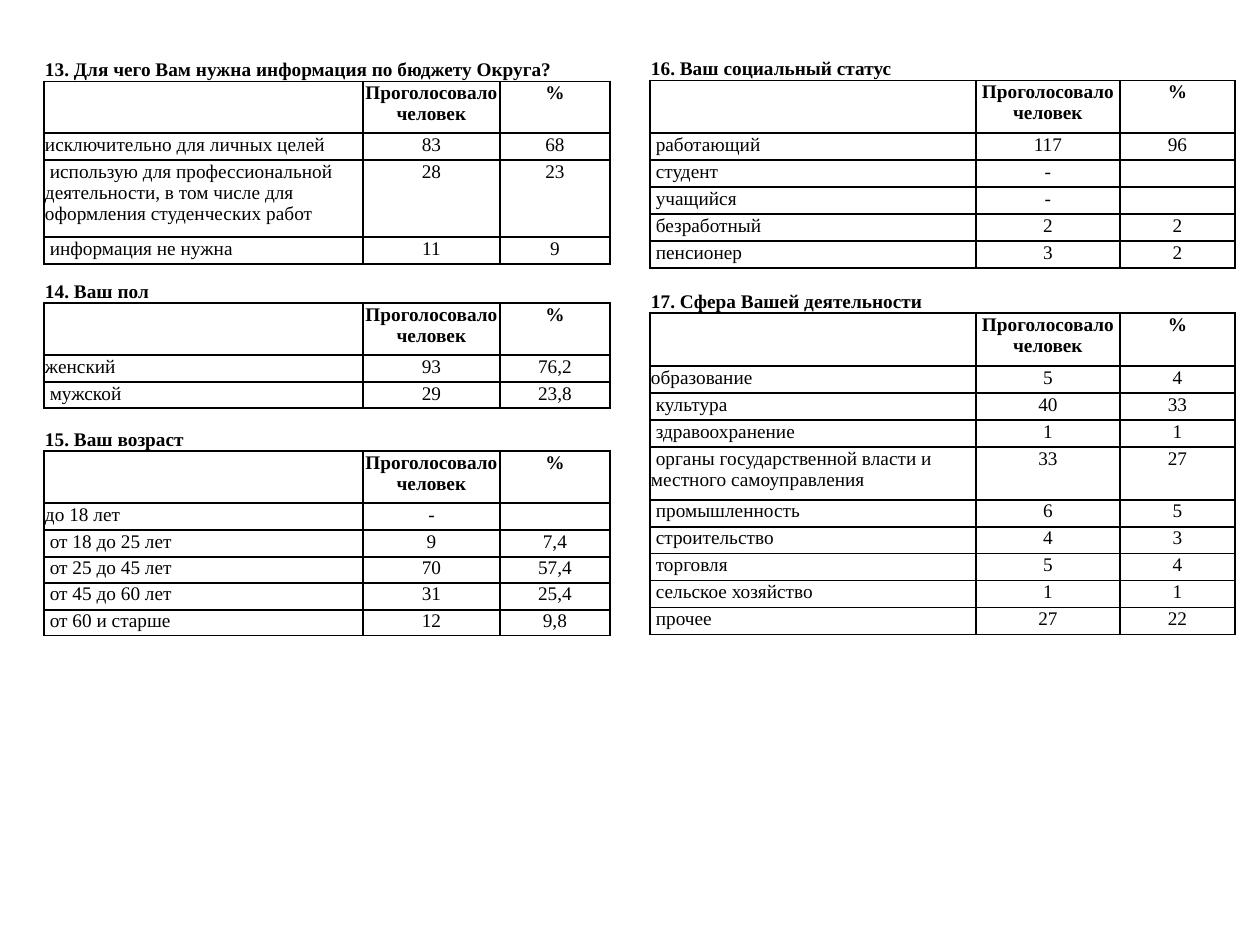
from lxml import etree
from pptx import Presentation
from pptx import util as u
from pptx.dml.color import RGBColor
from pptx.enum import text
from pptx.oxml.ns import qn

PX = 914400 / 126
FONT, SIZE, BLACK = "Times New Roman", 11, "000000"
HEADER = ("", "Проголосовало человек", "%")
ALIGN = text.PP_ALIGN

LEFT_QUESTIONS = [
    ("13. Для чего Вам нужна информация по бюджету Округа?", [
        ("исключительно для личных целей", "83", "68"),
        (" использую для профессиональной деятельности, в том числе для "
         "оформления студенческих работ", "28", "23"),
        (" информация не нужна", "11", "9"),
    ]),
    ("14. Ваш пол", [
        ("женский", "93", "76,2"),
        (" мужской", "29", "23,8"),
    ]),
    ("15. Ваш возраст", [
        ("до 18 лет", "-", ""),
        (" от 18 до 25 лет", "9", "7,4"),
        (" от 25 до 45 лет", "70", "57,4"),
        (" от 45 до 60 лет", "31", "25,4"),
        (" от 60 и старше", "12", "9,8"),
    ]),
]
LEFT_HEIGHTS = [36, 52, 27, 77, 27,
                39, 52, 27, 26,
                43, 52, 27, 27, 26, 27, 26]

RIGHT_QUESTIONS = [
    ("16. Ваш социальный статус", [
        (" работающий", "117", "96"),
        (" студент", "-", ""),
        (" учащийся", "-", ""),
        (" безработный", "2", "2"),
        (" пенсионер", "3", "2"),
    ]),
    ("17. Сфера Вашей деятельности", [
        ("образование", "5", "4"),
        (" культура", "40", "33"),
        (" здравоохранение", "1", "1"),
        (" органы государственной власти и местного самоуправления", "33", "27"),
        (" промышленность", "6", "5"),
        (" строительство", "4", "3"),
        (" торговля", "5", "4"),
        (" сельское хозяйство", "1", "1"),
        (" прочее", "27", "22"),
    ]),
]
RIGHT_HEIGHTS = [25, 53] + [27] * 5 + [45, 53] + [27] * 3 + [53] + [27] * 5


def px(n):
    return u.Emu(round(n * PX))


def color(value):
    return RGBColor.from_string(value)


def set_borders(cell, widths):
    """Set the left, right, top and bottom lines in points; 0 means no line."""
    tc_pr = cell._tc.get_or_add_tcPr()
    for i, (side, width) in enumerate(zip("LRTB", widths)):
        ln = etree.Element(qn(f"a:ln{side}"), w=str(u.Pt(width)))
        if width:
            fill = etree.SubElement(ln, qn("a:solidFill"))
            etree.SubElement(fill, qn("a:srgbClr"), val=BLACK)
        else:
            etree.SubElement(ln, qn("a:noFill"))
        tc_pr.insert(i, ln)


def fill_cell(cell, words, align, bold, borders):
    cell.margin_left = cell.margin_right = cell.margin_top = px(1)
    cell.margin_bottom = 0
    cell.fill.background()
    set_borders(cell, borders)
    p = cell.text_frame.paragraphs[0]
    p.alignment = align
    if not words:
        end = etree.SubElement(p._p, qn("a:endParaRPr"))
        end.set("sz", str(SIZE * 100))
        return
    r = p.add_run()
    r.text = words
    r.font.name, r.font.size, r.font.bold = FONT, u.Pt(SIZE), bold
    r.font.color.rgb = color(BLACK)


def add_question_row(table, row, title):
    above = 1 if row else 0
    below = 1 if row else 0.5
    for col in range(3):
        cell = table.cell(row, col)
        fill_cell(cell, "" if col else title, ALIGN.JUSTIFY, True, (0, 0, above, below))
        cell.vertical_anchor = text.MSO_ANCHOR.BOTTOM
    table.cell(row, 0).merge(table.cell(row, 2))


def add_answer_row(table, row, values, bold=False):
    above = 0.5 if row == 1 else 1
    for col, value in enumerate(values):
        align = ALIGN.CENTER if col else ALIGN.LEFT
        fill_cell(table.cell(row, col), value, align, bold, (1, 1, above, 1))


def add_survey_table(s, left, top, col_widths, row_heights, questions):
    frame = s.shapes.add_table(len(row_heights), len(col_widths), px(left), px(top),
                               px(sum(col_widths)), px(sum(row_heights)))
    table = frame.table
    table.first_row = table.horz_banding = False
    for column, width in zip(table.columns, col_widths):
        column.width = px(width)
    for table_row, height in zip(table.rows, row_heights):
        table_row.height = px(height)

    row = 0
    for title, answers in questions:
        add_question_row(table, row, title)
        add_answer_row(table, row + 1, HEADER, bold=True)
        for i, answer in enumerate(answers, row + 2):
            add_answer_row(table, i, answer)
        row += len(answers) + 2


def main():
    prs = Presentation()
    prs.slide_width, prs.slide_height = px(1260), px(945)
    s = prs.slides.add_slide(prs.slide_layouts[6])
    add_survey_table(s, 44, 45, [319, 137, 110], LEFT_HEIGHTS, LEFT_QUESTIONS)
    add_survey_table(s, 650, 55, [326, 144, 115], RIGHT_HEIGHTS, RIGHT_QUESTIONS)
    prs.save("out.pptx")


if __name__ == "__main__":
    main()
